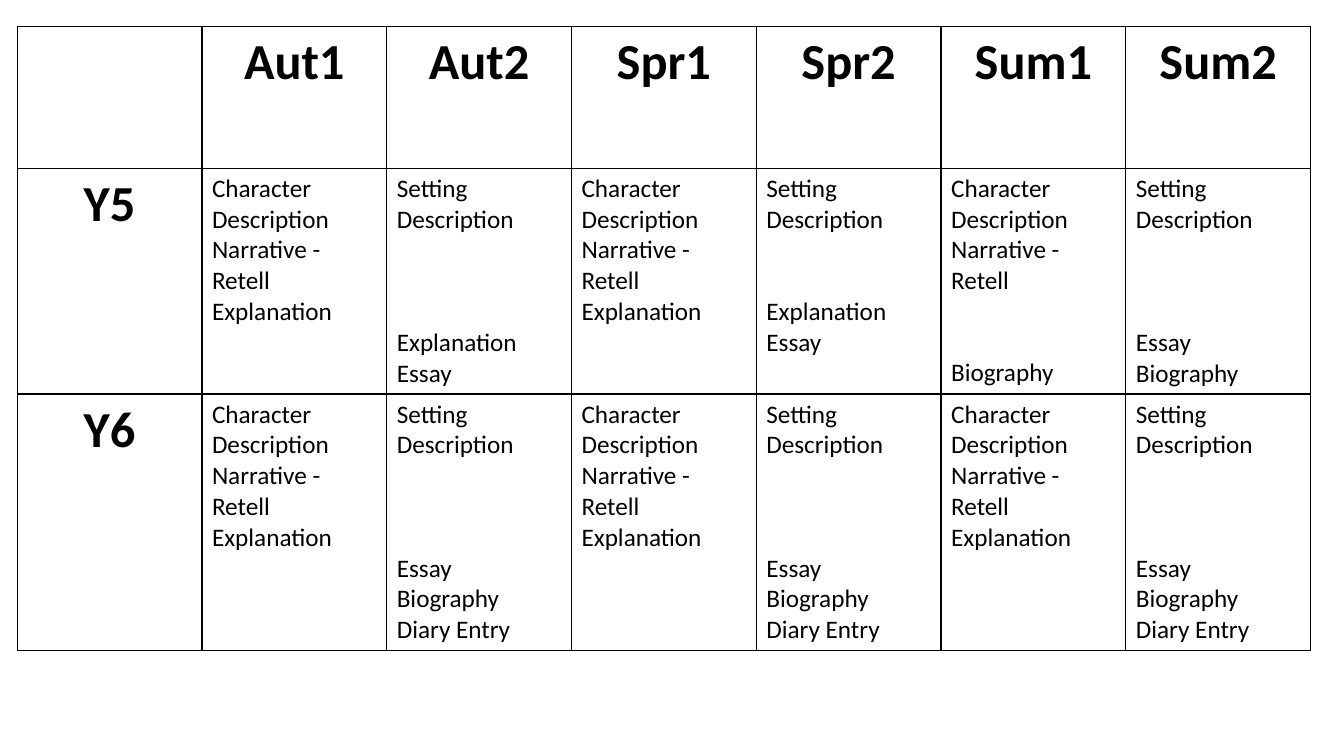
from dataclasses import dataclass

from lxml.etree import SubElement
from pptx import Presentation
from pptx.dml.color import RGBColor
from pptx.enum.text import PP_ALIGN as Align
from pptx.oxml.ns import qn
from pptx.table import _Cell as Cell
from pptx.util import Inches, Pt

FONT = "Calibri"
BLACK = "000000"
LINE_HEIGHT = 22  # points taken by one line of body text
COLUMN_WIDTH = 12.83 / 7
ROW_HEIGHTS = (1.41, 2.24, 2.54)


@dataclass(frozen=True)
class Genre:
    text: str
    lines_above: int = 0


@dataclass(frozen=True)
class YearGroup:
    name: str
    terms: tuple[tuple[Genre, ...], ...]


# Curriculum content
TERMS = ("Aut1", "Aut2", "Spr1", "Spr2", "Sum1", "Sum2")
CHARACTER = (Genre("Character Description"), Genre("Narrative - Retell"))
CHARACTER_EXPLANATION = CHARACTER + (Genre("Explanation"),)
SETTING = Genre("Setting Description")
SETTING_DIARY = (SETTING, Genre("Essay", 3), Genre("Biography"), Genre("Diary Entry"))

YEAR_GROUPS = (
    YearGroup("Y5", (
        CHARACTER_EXPLANATION,
        (SETTING, Genre("Explanation", 3), Genre("Essay")),
        CHARACTER_EXPLANATION,
        (SETTING, Genre("Explanation", 2), Genre("Essay")),
        CHARACTER + (Genre("Biography", 2),),
        (SETTING, Genre("Essay", 3), Genre("Biography")),
    )),
    YearGroup("Y6", (CHARACTER_EXPLANATION, SETTING_DIARY) * 3),
)


def color(value: str) -> RGBColor:
    return RGBColor.from_string(value)


def style_cell(cell: Cell) -> None:
    """Give the cell thin black borders and no fill."""
    properties = cell._tc.get_or_add_tcPr()
    for side in ("a:lnL", "a:lnR", "a:lnT", "a:lnB"):
        border = SubElement(properties, qn(side), w=str(Pt(1)))
        fill = SubElement(border, qn("a:solidFill"))
        SubElement(fill, qn("a:srgbClr"), val=BLACK)
    cell.fill.background()


def write_cell(cell: Cell, genres: tuple[Genre, ...], size: int = 18,
               bold: bool = False, align: Align = Align.LEFT) -> None:
    frame = cell.text_frame
    for index, genre in enumerate(genres):
        paragraph = frame.add_paragraph() if index else frame.paragraphs[0]
        paragraph.text = genre.text
        paragraph.alignment = align
        if genre.lines_above:
            paragraph.space_before = Pt(genre.lines_above * LINE_HEIGHT)
        font = paragraph.font
        font.name, font.size, font.bold = FONT, Pt(size), bold
        font.color.rgb = color(BLACK)


def write_heading(cell: Cell, text: str) -> None:
    write_cell(cell, (Genre(text),), 36, True, Align.CENTER)


def main() -> None:
    presentation = Presentation()
    presentation.slide_width = Inches(13.33)
    presentation.slide_height = Inches(7.5)
    slide = presentation.slides.add_slide(presentation.slide_layouts[6])

    # Table grid
    table = slide.shapes.add_table(
        len(ROW_HEIGHTS), len(TERMS) + 1, Inches(0.17), Inches(0.26),
        Inches(12.83), Inches(sum(ROW_HEIGHTS))).table
    table.first_row = table.horz_banding = False
    for column in table.columns:
        column.width = Inches(COLUMN_WIDTH)
    for row, height in zip(table.rows, ROW_HEIGHTS):
        row.height = Inches(height)
    for cell in table.iter_cells():
        style_cell(cell)

    # Term headings
    for column_index, term in enumerate(TERMS, 1):
        write_heading(table.cell(0, column_index), term)

    # Year groups
    for row_index, year in enumerate(YEAR_GROUPS, 1):
        write_heading(table.cell(row_index, 0), year.name)
        for column_index, genres in enumerate(year.terms, 1):
            write_cell(table.cell(row_index, column_index), genres)

    presentation.save("out.pptx")


if __name__ == "__main__":
    main()
